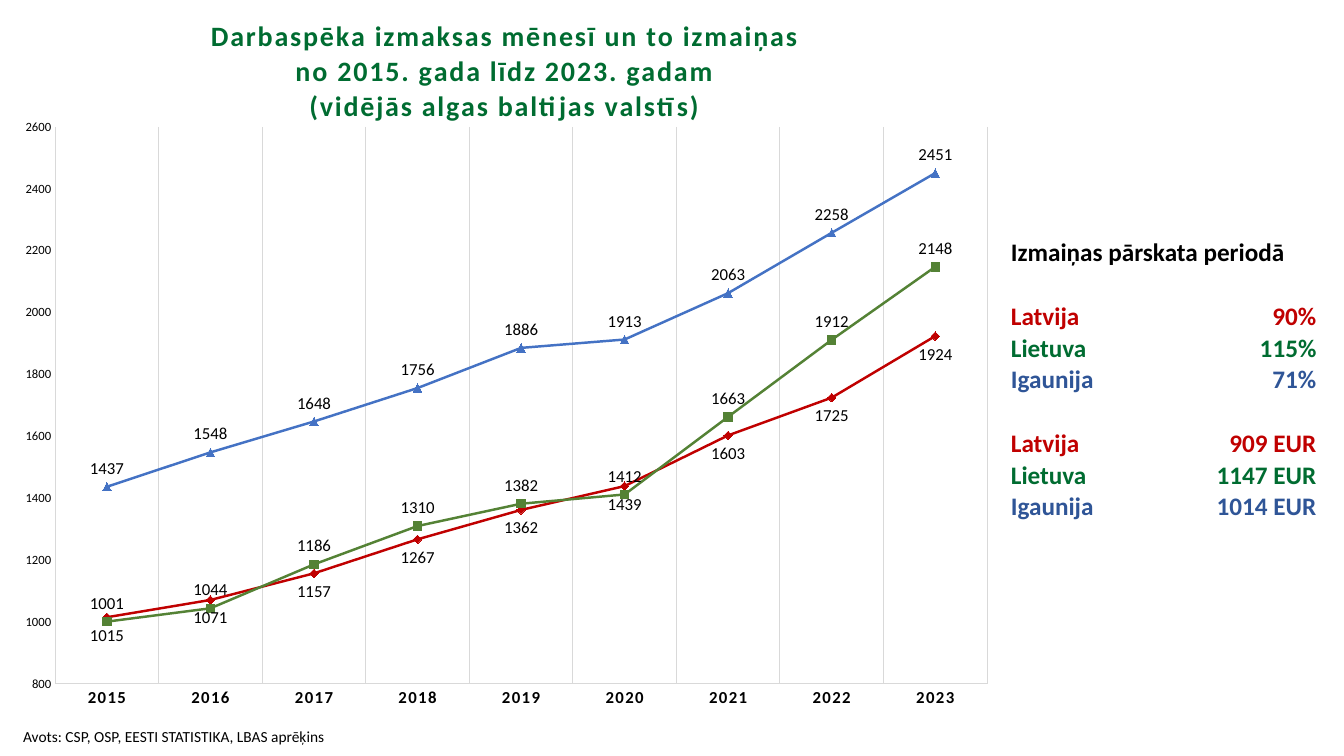
"""Build a slide comparing monthly labour costs in the Baltic states."""
import lxml.etree
import pptx
import pptx.chart.data
import pptx.dml.color
import pptx.enum.chart
import pptx.enum.text
import pptx.oxml.ns
import pptx.util

Pt = pptx.util.Pt
ALIGN = pptx.enum.text.PP_ALIGN
MARKER = pptx.enum.chart.XL_MARKER_STYLE
LABEL = pptx.enum.chart.XL_LABEL_POSITION

BLACK, GRID = "000000", "D9D9D9"
RED, GREEN, BLUE = "C00000", "006C31", "2F5597"

TITLE = ("Darbaspēka izmaksas mēnesī un to izmaiņas\n"
         "no 2015. gada līdz 2023. gadam\n"
         "(vidējās algas baltijas valstīs)")
YEARS = [str(year) for year in range(2015, 2024)]
SERIES = [
    ("Latvija", RED, MARKER.DIAMOND, LABEL.BELOW,
     [1015, 1071, 1157, 1267, 1362, 1439, 1603, 1725, 1924]),
    ("Lietuva", "548235", MARKER.SQUARE, LABEL.ABOVE,
     [1001, 1044, 1186, 1310, 1382, 1412, 1663, 1912, 2148]),
    ("Igaunija", "4472C4", MARKER.TRIANGLE, LABEL.ABOVE,
     [1437, 1548, 1648, 1756, 1886, 1913, 2063, 2258, 2451]),
]
CHANGES = [
    ("Izmaiņas pārskata periodā", "", BLACK),
    ("", "", BLACK),
    ("Latvija", "90%", RED),
    ("Lietuva", "115%", GREEN),
    ("Igaunija", "71%", BLUE),
    ("", "", BLACK),
    ("Latvija", "909 EUR", RED),
    ("Lietuva", "1147 EUR", GREEN),
    ("Igaunija", "1014 EUR", BLUE),
]


def rgb(value):
    return pptx.dml.color.RGBColor.from_string(value)


class SlideBuilder:
    font_name = "Calibri"

    def __init__(self, presentation):
        self.slide = presentation.slides.add_slide(presentation.slide_layouts[6])

    def style_font(self, font, size, color=BLACK, bold=False):
        font.name = self.font_name
        font.size = Pt(size)
        font.bold = bold
        font.color.rgb = rgb(color)

    def style_line(self, line, color, width):
        line.color.rgb = rgb(color)
        line.width = Pt(width)

    def place_manually(self, parent, index, **settings):
        qn = pptx.oxml.ns.qn
        for layout in parent.findall(qn("c:layout")):
            parent.remove(layout)
        layout = lxml.etree.Element(qn("c:layout"))
        manual = lxml.etree.SubElement(layout, qn("c:manualLayout"))
        for name, value in settings.items():
            lxml.etree.SubElement(manual, qn("c:" + name)).set("val", str(value))
        parent.insert(index, layout)

    def add_line_chart(self, left, top, width, height):
        data = pptx.chart.data.CategoryChartData(number_format="0")
        data.categories = YEARS
        for name, *_, values in SERIES:
            data.add_series(name, values)
        chart = self.slide.shapes.add_chart(
            pptx.enum.chart.XL_CHART_TYPE.LINE_MARKERS,
            Pt(left), Pt(top), Pt(width), Pt(height), data).chart
        self.style_font(chart.font, 10)
        chart.has_legend = False
        chart.plots[0].vary_by_categories = False
        self.format_title(chart)
        self.format_axes(chart)
        for series, details in zip(chart.plots[0].series, SERIES):
            self.format_series(series, *details[1:4])
        plot_area = chart.plots[0]._element.getparent()
        self.place_manually(plot_area, 0, layoutTarget="inner", xMode="edge",
                            yMode="edge", x=0.041, y=0.177, w=0.91, h=0.776)

    def format_title(self, chart):
        chart.has_title = True
        title = chart.chart_title
        title.text_frame.text = TITLE
        for paragraph in title.text_frame.paragraphs:
            paragraph.alignment = ALIGN.CENTER
            for run in paragraph.runs:
                self.style_font(run.font, 20, GREEN, True)
                run.font._element.set("spc", "120")
        self.place_manually(title._element, 1, xMode="edge", yMode="edge",
                            x=0.19, y=0.02)

    def format_axes(self, chart):
        category, value = chart.category_axis, chart.value_axis
        for axis, size, bold in ((category, 12, True), (value, 9, False)):
            axis.major_tick_mark = pptx.enum.chart.XL_TICK_MARK.NONE
            axis.minor_tick_mark = pptx.enum.chart.XL_TICK_MARK.NONE
            self.style_line(axis.format.line, GRID, 0.75)
            self.style_font(axis.tick_labels.font, size, bold=bold)
        category.tick_labels.font._element.set("spc", "100")
        category.has_major_gridlines = True
        self.style_line(category.major_gridlines.format.line, GRID, 0.75)
        value.has_major_gridlines = False
        value.minimum_scale, value.maximum_scale = 800, 2600
        value.major_unit = 200
        value.tick_labels.number_format = "0"
        value.tick_labels.number_format_is_linked = False

    def format_series(self, series, color, marker_style, label_position):
        series.smooth = False
        self.style_line(series.format.line, color, 1.75)
        marker = series.marker
        marker.style, marker.size = marker_style, 6
        marker.format.fill.solid()
        marker.format.fill.fore_color.rgb = rgb(color)
        self.style_line(marker.format.line, color, 0.75)
        labels = series.data_labels
        labels.show_value = True
        labels.position = label_position
        labels.number_format = "0"
        labels.number_format_is_linked = False
        self.style_font(labels.font, 12)

    def add_changes_table(self, left, top, column_widths, row_height):
        table = self.slide.shapes.add_table(
            len(CHANGES), 2, Pt(left), Pt(top), Pt(sum(column_widths)),
            Pt(row_height * len(CHANGES))).table
        table.first_row = table.horz_banding = False
        for column, width in zip(table.columns, column_widths):
            column.width = Pt(width)
        for row, (country, change, color) in zip(table.rows, CHANGES):
            row.height = Pt(row_height)
            self.fill_cell(row.cells[0], country, color, ALIGN.LEFT)
            self.fill_cell(row.cells[1], change, color, ALIGN.RIGHT)
        table.cell(0, 0).merge(table.cell(0, 1))

    def fill_cell(self, cell, text, color, alignment):
        cell.fill.background()
        cell.margin_left = cell.margin_right = cell.margin_top = Pt(0.7)
        cell.margin_bottom = 0
        cell.vertical_anchor = pptx.enum.text.MSO_ANCHOR.BOTTOM
        cell.text_frame.text = text
        paragraph = cell.text_frame.paragraphs[0]
        paragraph.alignment = alignment
        for run in paragraph.runs:
            self.style_font(run.font, 18, color, True)

    def add_text(self, text, left, top, width, height, size):
        box = self.slide.shapes.add_textbox(Pt(left), Pt(top), Pt(width), Pt(height))
        box.text_frame.word_wrap = True
        box.text_frame.text = text
        self.style_font(box.text_frame.paragraphs[0].runs[0].font, size)


def main():
    presentation = pptx.Presentation()
    presentation.slide_width, presentation.slide_height = Pt(960), Pt(540)
    builder = SlideBuilder(presentation)
    builder.add_line_chart(9.4, 0, 731.5, 512.6)
    builder.add_changes_table(721.4, 169.2, (145.4, 74.2), 22.3)
    builder.add_text("Avots: CSP, OSP, EESTI STATISTIKA, LBAS aprēķins",
                     9.4, 515.5, 272, 21, 11)
    presentation.save("out.pptx")


if __name__ == "__main__":
    main()
